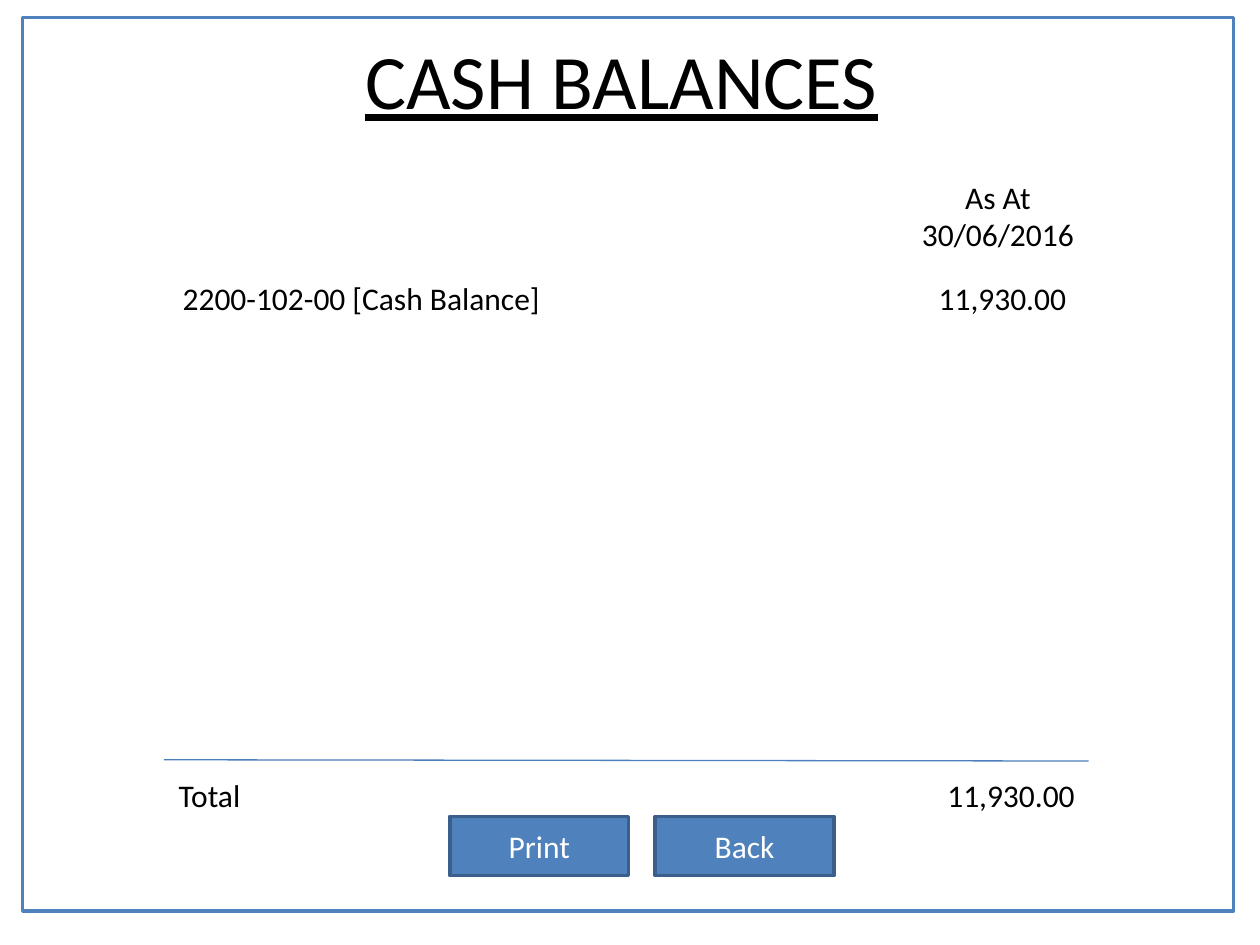
"""Build the cash balances slide."""
from typing import NamedTuple

from lxml.etree import SubElement
from pptx import Presentation
from pptx.dml.color import RGBColor
from pptx.enum.shapes import MSO_CONNECTOR, MSO_SHAPE
from pptx.enum.text import MSO_ANCHOR, MSO_AUTO_SIZE, PP_ALIGN
from pptx.oxml.ns import qn
from pptx.util import Inches, Pt

COLORS = {
    "white": "FFFFFF",
    "black": "000000",
    "blue": "4F81BD",
    "edge": "3A5F8C",
    "rule": "4B7EBC",
}


class Box(NamedTuple):
    left: float
    top: float
    width: float
    height: float


class Label(NamedTuple):
    text: str
    box: Box
    align: PP_ALIGN = PP_ALIGN.LEFT


LABELS = [
    Label("As At\n30/06/2016", Box(7.21, 1.36, 1.42, 0.71), PP_ALIGN.CENTER),
    Label("11,930.00", Box(7.42, 6.11, 1.22, 0.4)),
    Label("Total", Box(1.32, 6.11, 0.7, 0.4)),
]
BUTTONS = ["Print", "Back"]


def color(name: str) -> RGBColor:
    return RGBColor.from_string(COLORS[name])


def place(shape, box: Box) -> None:
    shape.left, shape.top, shape.width, shape.height = map(Inches, box)


def write(shape, text: str, *, size=18, ink="black", align=PP_ALIGN.LEFT,
          anchor=MSO_ANCHOR.TOP, wrap=False, underline=None) -> None:
    frame = shape.text_frame
    frame.text = text
    frame.word_wrap = wrap
    frame.vertical_anchor = anchor
    frame.auto_size = MSO_AUTO_SIZE.NONE if wrap else MSO_AUTO_SIZE.SHAPE_TO_FIT_TEXT
    for line in frame.paragraphs:
        line.alignment = align
        for run in line.runs:
            run.font.name = "Calibri"
            run.font.size = Pt(size)
            run.font.color.rgb = color(ink)
            run.font.underline = underline


def panel(slide, box: Box, fill: str, edge: str):
    shape = slide.shapes.add_shape(MSO_SHAPE.RECTANGLE, *map(Inches, box))
    shape.shadow.inherit = False
    shape.fill.solid()
    shape.fill.fore_color.rgb = color(fill)
    shape.line.color.rgb = color(edge)
    shape.line.width = Pt(2)
    return shape


def rule(slide, start: tuple[float, float], end: tuple[float, float]) -> None:
    line = slide.shapes.add_connector(MSO_CONNECTOR.STRAIGHT, *map(Inches, start + end))
    line.line.color.rgb = color("rule")
    line.line.width = Pt(0.75)
    SubElement(line._element.spPr, qn("a:effectLst"))


def head(slide, text: str, box: Box) -> None:
    title = slide.shapes.title
    slide.shapes._spTree.append(title._element)
    place(title, box)
    write(title, text, size=44, underline=True)


def entry(slide, name: str, amount: str, box: Box, stop: float) -> None:
    shape = slide.shapes.add_textbox(*map(Inches, box))
    write(shape, f"{name}\t{amount}", anchor=MSO_ANCHOR.MIDDLE, wrap=True)
    shape.text_frame.margin_left = Inches(0.53)
    props = shape.text_frame.paragraphs[0]._p.get_or_add_pPr()
    tabs = SubElement(props, qn("a:tabLst"))
    SubElement(tabs, qn("a:tab"), pos=str(Inches(stop)), algn="l")


def main() -> None:
    deck = Presentation()
    deck.slide_width, deck.slide_height = Inches(10), Inches(7.5)
    slide = deck.slides.add_slide(deck.slide_layouts[5])
    panel(slide, Box(0.18, 0.14, 9.61, 7.09), "white", "blue")
    rule(slide, (1.3, 6.03), (8.64, 6.04))
    head(slide, "CASH BALANCES", Box(2.8, 0.21, 4.31, 0.84))
    for label in LABELS:
        shape = slide.shapes.add_textbox(*map(Inches, label.box))
        write(shape, label.text, align=label.align)
    entry(slide, "2200-102-00 [Cash Balance]", "11,930.00",
          Box(0.92, 2.13, 8.06, 0.47), 6)
    for i, text in enumerate(BUTTONS):
        shape = panel(slide, Box(3.57 + 1.63 * i, 6.48, 1.42, 0.47), "blue", "edge")
        write(shape, text, ink="white", align=PP_ALIGN.CENTER,
              anchor=MSO_ANCHOR.MIDDLE, wrap=True)
    deck.save("out.pptx")


if __name__ == "__main__":
    main()
